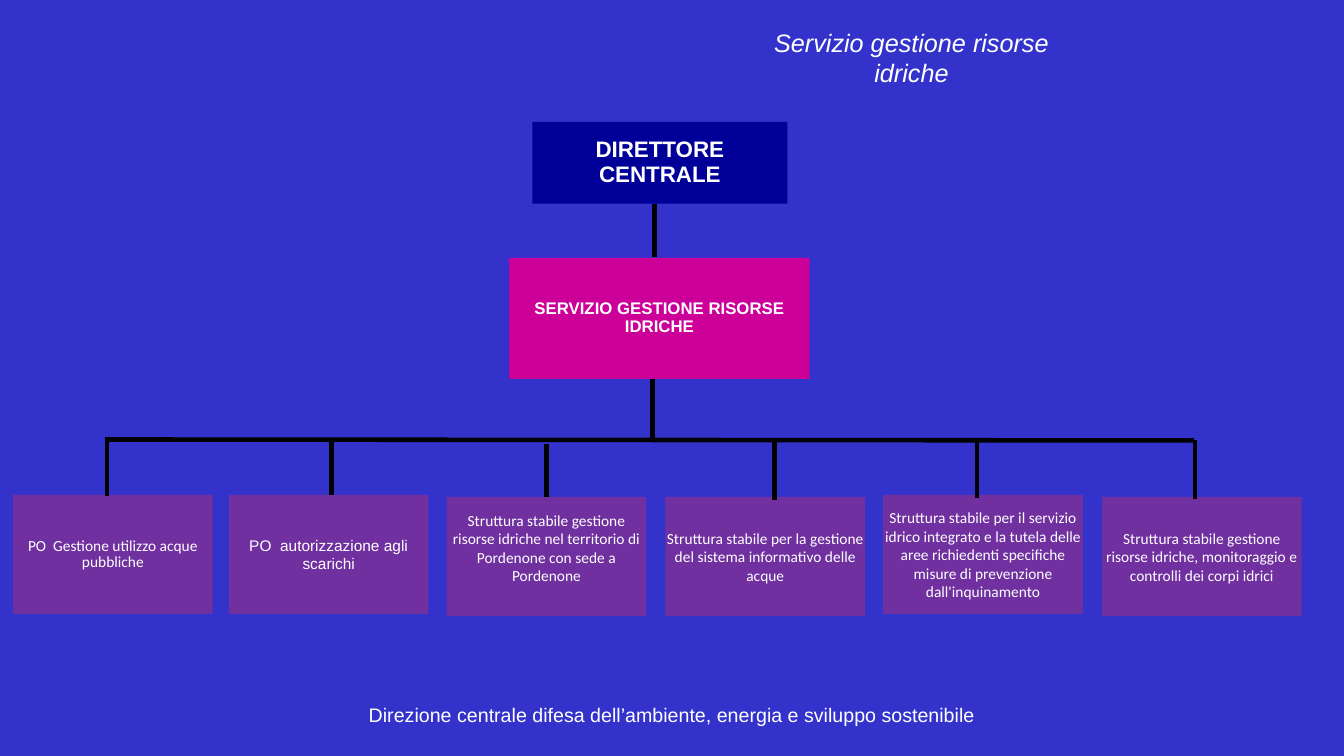
import pptx
import pptx.util
import pptx.dml.color
import pptx.enum.shapes
import pptx.enum.text
import pptx.oxml

Inches = pptx.util.Inches
Pt = pptx.util.Pt
RGBColor = pptx.dml.color.RGBColor
Anchor = pptx.enum.text.MSO_ANCHOR

BLUE = RGBColor(0x33, 0x33, 0xCC)
NAVY = RGBColor(0x00, 0x00, 0x99)
PINK = RGBColor(0xCC, 0x00, 0x99)
PURPLE = RGBColor(0x70, 0x30, 0xA0)
WHITE = RGBColor(0xFF, 0xFF, 0xFF)
BLACK = RGBColor(0x00, 0x00, 0x00)

UNITS = [
    (0.13, 4.91, "PO  Gestione utilizzo acque pubbliche", {"space": 0.9}),
    (2.27, 4.91, "PO  autorizzazione agli scarichi", {"font": "Arial"}),
    (4.43, 4.93, "Struttura stabile gestione risorse idriche nel territorio di "
     "Pordenone con sede a Pordenone", {"foot": 0.17}),
    (6.6, 4.93, "Struttura stabile per la gestione del sistema informativo "
     "delle acque", {}),
    (8.76, 4.91, "Struttura stabile per il servizio idrico integrato e la tutela "
     "delle aree richiedenti specifiche misure di prevenzione "
     "dall'inquinamento", {}),
    (10.93, 4.93, "Struttura stabile gestione risorse idriche, monitoraggio e "
     "controlli dei corpi idrici", {}),
]

LINES = [
    (6.49, 2.02, 6.49, 2.55),
    (6.47, 3.76, 6.47, 4.39),
    (1.07, 4.36, 11.84, 4.37),
    (1.06, 4.34, 1.06, 4.92),
    (3.29, 4.38, 3.29, 4.91),
    (7.68, 4.38, 7.68, 4.96),
    (9.69, 4.36, 9.69, 4.94),
    (11.85, 4.37, 11.85, 4.95),
]


def write(frame, text, size=11, font="Calibri", bold=False, italic=False,
          space=1.0, inset=0.01, foot=None, anchor=Anchor.MIDDLE):
    frame.word_wrap = True
    frame.auto_size = pptx.enum.text.MSO_AUTO_SIZE.NONE
    frame.vertical_anchor = anchor
    frame.margin_left = frame.margin_right = Inches(inset)
    frame.margin_top = Inches(inset / 2)
    frame.margin_bottom = Inches(inset / 2 if foot is None else foot)
    para = frame.paragraphs[0]
    para.alignment = pptx.enum.text.PP_ALIGN.CENTER
    para.line_spacing = space
    run = para.add_run()
    run.text = text
    run.font.name = font
    run.font.size = Pt(size)
    run.font.bold = bold
    run.font.italic = italic
    run.font.color.rgb = WHITE


class Chart:
    def __init__(self, deck):
        self.slide = deck.slides.add_slide(deck.slide_layouts[5])
        fill = self.slide.background.fill
        fill.solid()
        fill.fore_color.rgb = BLUE

    def title(self, text, left, top, width, height, **style):
        head = self.slide.shapes.title
        head.left, head.top = Inches(left), Inches(top)
        head.width, head.height = Inches(width), Inches(height)
        write(head.text_frame, text, **style)

    def label(self, text, left, top, width, height, **style):
        box = self.slide.shapes.add_textbox(
            Inches(left), Inches(top), Inches(width), Inches(height))
        write(box.text_frame, text, **style)

    def box(self, text, left, top, width, height, color, **style):
        rect = self.slide.shapes.add_shape(
            pptx.enum.shapes.MSO_SHAPE.RECTANGLE,
            Inches(left), Inches(top), Inches(width), Inches(height))
        rect.shadow.inherit = False
        rect.fill.solid()
        rect.fill.fore_color.rgb = color
        rect.line.fill.background()
        write(rect.text_frame, text, **style)
        return rect

    def line(self, left, top, right, low, target=None):
        link = self.slide.shapes.add_connector(
            pptx.enum.shapes.MSO_CONNECTOR.STRAIGHT,
            Inches(left), Inches(top), Inches(right), Inches(low))
        link.line.color.rgb = BLACK
        link.line.width = Pt(3.25)
        if target is not None:
            link.end_connect(target, 0)
        props = link.element.spPr
        props.append(props.makeelement(pptx.oxml.ns.qn("a:effectLst"), {}))


def main():
    deck = pptx.Presentation()
    deck.slide_width = Inches(13.33)
    deck.slide_height = Inches(7.5)
    chart = Chart(deck)
    chart.title("Servizio gestione risorse idriche", 7.47, 0.22, 3.14, 0.7,
                size=18, font="Arial", italic=True, inset=0.1,
                anchor=Anchor.TOP)
    chart.box("DIRETTORE CENTRALE", 5.28, 1.21, 2.53, 0.81, NAVY,
              size=16, font="Arial", bold=True, space=0.9)
    chart.box("SERVIZIO GESTIONE RISORSE IDRICHE", 5.05, 2.56, 2.98, 1.2, PINK,
              size=12, font="Arial", bold=True, space=0.9)
    units = [chart.box(text, left, top, 1.98, 1.18, PURPLE, **style)
             for left, top, text, style in UNITS]
    for ends in LINES:
        chart.line(*ends)
    chart.line(5.42, 4.4, 5.42, 4.93, target=units[2])
    chart.label("Direzione centrale difesa dell’ambiente, energia e sviluppo "
                "sostenibile", 1.94, 6.97, 9.45, 0.24,
                size=14, font="Arial", inset=0)
    deck.save("out.pptx")


if __name__ == "__main__":
    main()
